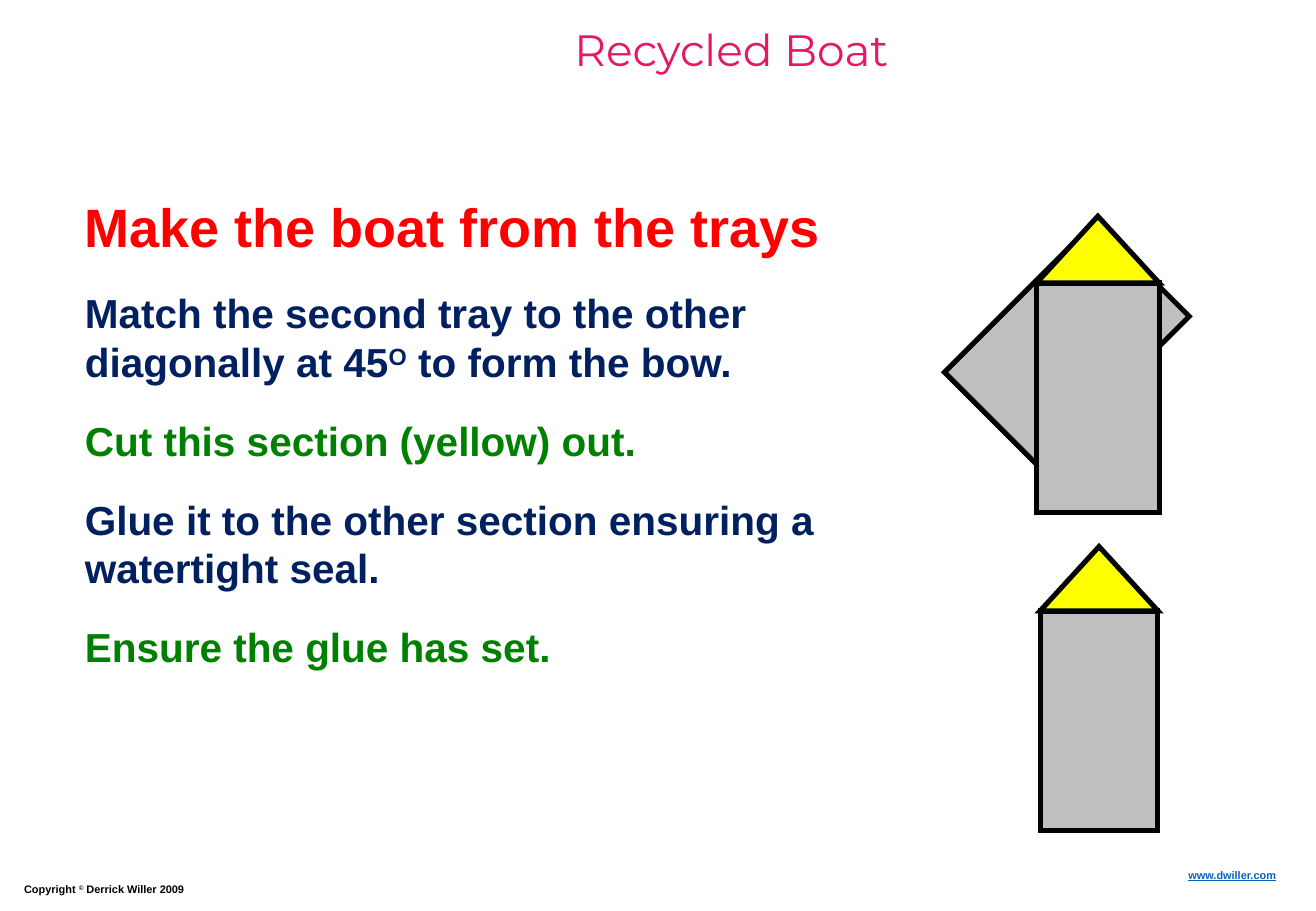
from lxml import etree
from pptx import Presentation
from pptx.dml.color import RGBColor
from pptx.enum.shapes import MSO_SHAPE
from pptx.enum.text import PP_ALIGN
from pptx.oxml.ns import qn
from pptx.util import Inches, Pt

BLACK = RGBColor(0x00, 0x00, 0x00)
LINK_BLUE = RGBColor(0x05, 0x63, 0xC1)
PINK = RGBColor(0xE8, 0x17, 0x66)
RED = RGBColor(0xFF, 0x00, 0x00)
NAVY = RGBColor(0x00, 0x20, 0x60)
GREEN = RGBColor(0x00, 0x80, 0x00)
GREY = RGBColor(0xBF, 0xBF, 0xBF)
YELLOW = RGBColor(0xFF, 0xFF, 0x00)

deck = Presentation()
deck.slide_width, deck.slide_height = Inches(10.83), Inches(7.5)
page = deck.slides.add_slide(deck.slide_layouts[6])


def add_text(bounds, paragraphs, align=PP_ALIGN.LEFT, gap=0):
    """Each paragraph is (font format, texts); every second text is raised."""
    box = page.shapes.add_textbox(*map(Inches, bounds))
    frame = box.text_frame
    frame.word_wrap = True
    for number, (style, texts) in enumerate(paragraphs):
        para = frame.add_paragraph() if number else frame.paragraphs[0]
        para.alignment = align
        para.space_before = Pt(gap if number else 0)
        for position, text in enumerate(texts):
            span = para.add_run()
            span.text = text
            for name, value in style.items():
                if name == "color":
                    span.font.color.rgb = value
                else:
                    setattr(span.font, name, value)
            if position % 2:
                span._r.get_or_add_rPr().set("baseline", "30000")


def add_part(kind, bounds, fill, rotation=0):
    part = page.shapes.add_shape(kind, *map(Inches, bounds))
    part.shadow.inherit = False
    part.rotation = rotation
    part.fill.solid()
    part.fill.fore_color.rgb = fill
    part.line.color.rgb = BLACK
    part.line.width = Pt(3)
    # Sharp corners
    outline = part.line._get_or_add_ln()
    etree.SubElement(outline, qn("a:miter")).set("lim", "800000")


# Footer and title
small = {"name": "Arial", "size": Pt(6.5), "bold": True, "color": BLACK}
link = {**small, "color": LINK_BLUE, "underline": True}
title = {"name": "Montserrat", "size": Pt(26), "color": PINK}
add_text((0.1, 7.22, 4.59, 0.21), [(small, ["Copyright ", "©", " Derrick Willer 2009"])])
add_text((9.51, 7.1, 1.09, 0.21), [(link, ["www.dwiller.com"])], PP_ALIGN.RIGHT)
add_text((4.42, 0.14, 3.2, 0.55), [(title, ["Recycled Boat"])], PP_ALIGN.CENTER)

# Instructions
heading = {"name": "Arial", "size": Pt(32), "bold": True, "color": RED}
navy_step = {**heading, "size": Pt(24), "color": NAVY}
green_step = {**navy_step, "color": GREEN}
add_text((0.6, 1.54, 6.37, 4.41), [
    (heading, ["Make the boat from the trays"]),
    (navy_step, ["Match the second tray to the other diagonally at 45", "O",
                 " to form the bow."]),
    (green_step, ["Cut this section (yellow) out."]),
    (navy_step, ["Glue it to the other section ensuring a watertight seal."]),
    (green_step, ["Ensure the glue has set."]),
], gap=18)

# Diagonal tray behind the upper boat
add_part(MSO_SHAPE.RECTANGLE, (8.23, 1.96, 1.1, 1.75), GREY, 45)

# Boats: grey hull with a yellow bow on top
for left, deck_line, width, hull_height, bow_height in (
    (8.53, 2.33, 1.01, 1.89, 0.55),
    (8.56, 5.03, 0.97, 1.81, 0.53),
):
    add_part(MSO_SHAPE.RECTANGLE, (left, deck_line, width, hull_height), GREY)
    add_part(MSO_SHAPE.ISOSCELES_TRIANGLE,
             (left, deck_line - bow_height, width, bow_height), YELLOW)

deck.save("out.pptx")
